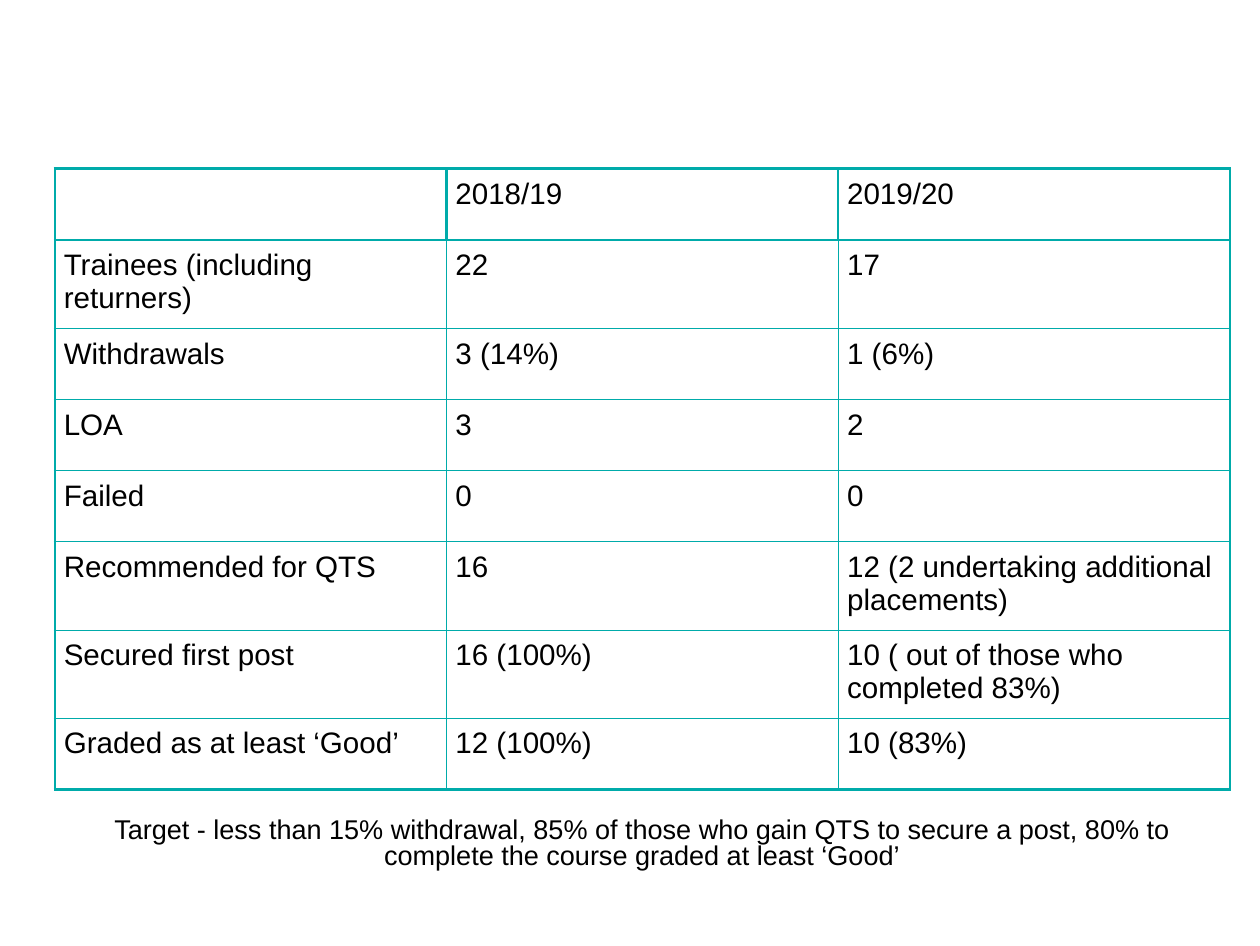
from dataclasses import dataclass

from lxml.etree import SubElement
from pptx import Presentation
from pptx.dml.color import RGBColor as Color
from pptx.enum.text import MSO_ANCHOR as Anchor, PP_ALIGN as Align
from pptx.oxml.ns import qn
from pptx.util import Pt


@dataclass(frozen=True)
class Theme:
    font: str = "Arial"
    text: str = "000000"
    rule: str = "00ABAA"
    table_size: int = 24
    caption_size: int = 22
    thick: float = 2.25
    thin: float = 0.75
    inset: float = 7.2


@dataclass(frozen=True)
class Box:
    left: float
    top: float
    width: float
    height: float


THEME = Theme()
HEADER_HEIGHT, ROW_HEIGHT, TALL_ROW_HEIGHT = 58.3, 57.6, 71.8

# Each row has its height followed by its cell texts
OUTCOMES = [
    (HEADER_HEIGHT, "", "2018/19", "2019/20"),
    (TALL_ROW_HEIGHT, "Trainees (including returners)", "22", "17"),
    (ROW_HEIGHT, "Withdrawals", "3 (14%)", "1 (6%)"),
    (ROW_HEIGHT, "LOA", "3", "2"),
    (ROW_HEIGHT, "Failed", "0", "0"),
    (TALL_ROW_HEIGHT, "Recommended for QTS", "16",
     "12 (2 undertaking additional placements)"),
    (TALL_ROW_HEIGHT, "Secured first post", "16 (100%)",
     "10 ( out of those who completed 83%)"),
    (ROW_HEIGHT, "Graded as at least ‘Good’", "12 (100%)", "10 (83%)"),
]
TARGET = ("Target - less than 15% withdrawal, 85% of those who gain QTS to "
          "secure a post, 80% to complete the course graded at least ‘Good’")


def style_text(para, size):
    para.font.name = THEME.font
    para.font.size = Pt(size)
    para.font.color.rgb = Color.from_string(THEME.text)


def set_margins(holder):
    for side in ("left", "right", "top", "bottom"):
        setattr(holder, f"margin_{side}", Pt(THEME.inset))


def add_border(cell, side, weight):
    line = SubElement(cell._tc.get_or_add_tcPr(), qn(f"a:ln{side}"), w=str(Pt(weight)))
    fill = SubElement(line, qn("a:solidFill"))
    SubElement(fill, qn("a:srgbClr"), val=THEME.rule)


def format_cell(cell, text, thick_sides):
    set_margins(cell)
    cell.vertical_anchor = Anchor.TOP
    for side in "LRTB":
        add_border(cell, side, THEME.thick if side in thick_sides else THEME.thin)
    cell.fill.background()
    cell.text = text
    style_text(cell.text_frame.paragraphs[0], THEME.table_size)


def add_outcomes(page, box):
    row_count, column_count = len(OUTCOMES), len(OUTCOMES[0]) - 1
    table = page.shapes.add_table(row_count, column_count, Pt(box.left), Pt(box.top),
                                  Pt(box.width), Pt(box.height)).table
    table.first_row = table.horz_banding = False
    for column in table.columns:
        column.width = Pt(box.width / column_count)
    for row, (height, *texts) in enumerate(OUTCOMES):
        table.rows[row].height = Pt(height)
        for column, text in enumerate(texts):
            # Thick rules frame the table and every header cell
            header = row == 0
            thick_sides = {
                "L": header or column == 0,
                "R": header or column == column_count - 1,
                "T": row <= 1,
                "B": header or row == row_count - 1,
            }
            format_cell(table.cell(row, column), text,
                        [side for side, thick in thick_sides.items() if thick])


def add_target(page, box):
    frame = page.shapes.add_textbox(Pt(box.left), Pt(box.top), Pt(box.width),
                                    Pt(box.height)).text_frame
    frame.word_wrap = True
    frame.vertical_anchor = Anchor.TOP
    set_margins(frame)
    para = frame.paragraphs[0]
    para.text = TARGET
    para.alignment = Align.CENTER
    para.line_spacing = 0.8
    style_text(para, THEME.caption_size)


def main():
    deck = Presentation()
    deck.slide_width, deck.slide_height = Pt(1023), Pt(768)
    page = deck.slides.add_slide(deck.slide_layouts[6])

    # Outcomes by year
    table_height = sum(height for height, *_ in OUTCOMES)
    add_outcomes(page, Box(44.6, 136.8, 954, table_height))

    # Target below the table
    add_target(page, Box(55.4, 657.4, 931.7, 97.2))

    deck.save("out.pptx")


if __name__ == "__main__":
    main()
